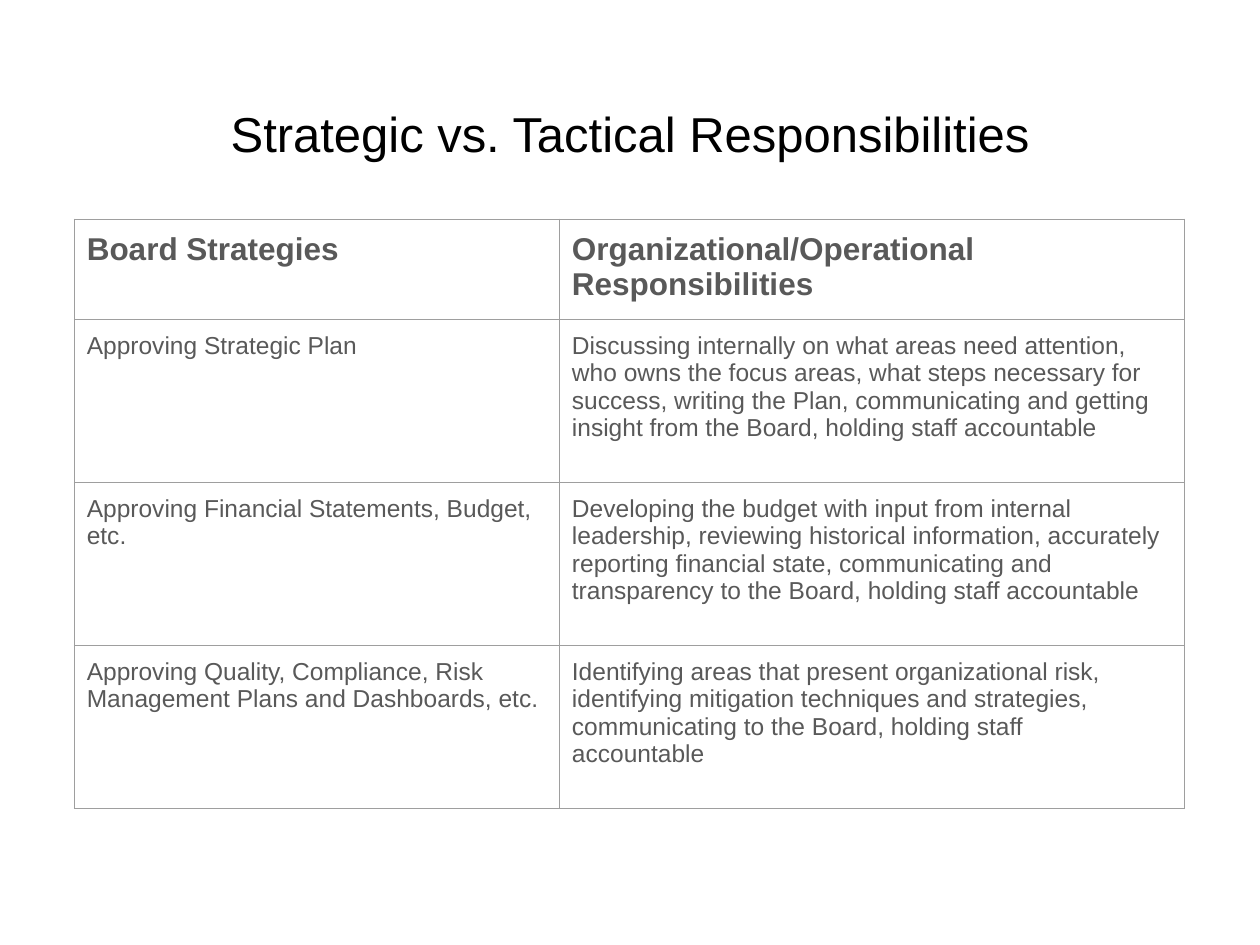
from dataclasses import dataclass

from lxml import etree
from pptx import Presentation
from pptx.dml.color import RGBColor
from pptx.enum.text import MSO_ANCHOR, PP_ALIGN
from pptx.oxml.ns import qn
from pptx.util import Cm, Pt

CENTER, LEFT = PP_ALIGN.CENTER, PP_ALIGN.LEFT
MIDDLE, TOP = MSO_ANCHOR.MIDDLE, MSO_ANCHOR.TOP


@dataclass(frozen=True)
class Theme:
    font: str = "Arial"
    title_color: str = "000000"
    body_color: str = "595959"
    border_color: str = "9E9E9E"
    title_size: int = 28
    header_size: int = 18
    body_size: int = 14
    border_width: float = 0.75


THEME = Theme()

# Each row pairs a board strategy with its operational counterpart
RESPONSIBILITIES = [
    ("Board Strategies", "Organizational/Operational Responsibilities"),
    ("Approving Strategic Plan",
     "Discussing internally on what areas need attention, who owns the focus "
     "areas, what steps necessary for success, writing the Plan, communicating "
     "and getting insight from the Board, holding staff accountable"),
    ("Approving Financial Statements, Budget, etc.",
     "Developing the budget with input from internal leadership, reviewing "
     "historical information, accurately reporting financial state, "
     "communicating and transparency to the Board, holding staff accountable"),
    ("Approving Quality, Compliance, Risk Management Plans and Dashboards, etc.",
     "Identifying areas that present organizational risk, identifying "
     "mitigation techniques and strategies, communicating to the Board, "
     "holding staff\naccountable"),
]
COLUMN_SHARES = (0.437, 0.563)
HEADER_HEIGHT = Cm(1.93)


def write_text(frame, text, *, size, color, bold=False, align=LEFT):
    """Fill a text frame, one paragraph for each line of text."""
    frame.word_wrap = True
    for index, line in enumerate(text.split("\n")):
        paragraph = frame.add_paragraph() if index else frame.paragraphs[0]
        paragraph.alignment = align
        run = paragraph.add_run()
        run.text = line
        run.font.name = THEME.font
        run.font.size = Pt(size)
        run.font.bold = bold
        run.font.color.rgb = RGBColor.from_string(color)


def set_borders(cell):
    """Draw all four edges; they must come before the fill in the XML."""
    properties = cell._tc.get_or_add_tcPr()
    for position, edge in enumerate(("a:lnL", "a:lnR", "a:lnT", "a:lnB")):
        line = etree.Element(qn(edge), w=str(Pt(THEME.border_width)))
        fill = etree.SubElement(line, qn("a:solidFill"))
        etree.SubElement(fill, qn("a:srgbClr"), val=THEME.border_color)
        properties.insert(position, line)


def add_title(slide, left, top, width, height):
    frame = slide.shapes.add_textbox(left, top, width, height).text_frame
    frame.vertical_anchor = MIDDLE
    write_text(frame, "Strategic vs. Tactical Responsibilities",
               size=THEME.title_size, color=THEME.title_color, align=CENTER)


def add_responsibilities(slide, left, top, width, height):
    table = slide.shapes.add_table(len(RESPONSIBILITIES), len(COLUMN_SHARES),
                                   left, top, width, height).table
    table.horz_banding = False
    for column, share in zip(table.columns, COLUMN_SHARES):
        column.width = int(width * share)

    body_height = (height - HEADER_HEIGHT) // (len(RESPONSIBILITIES) - 1)
    for row_index, texts in enumerate(RESPONSIBILITIES):
        is_header = row_index == 0
        table.rows[row_index].height = HEADER_HEIGHT if is_header else body_height
        for column_index, text in enumerate(texts):
            cell = table.cell(row_index, column_index)
            cell.margin_left = cell.margin_right = Cm(0.25)
            cell.margin_top = cell.margin_bottom = Cm(0.25)
            cell.vertical_anchor = TOP
            cell.fill.background()
            set_borders(cell)
            write_text(cell.text_frame, text, bold=is_header,
                       size=THEME.header_size if is_header else THEME.body_size,
                       color=THEME.body_color)


def main():
    deck = Presentation()
    deck.slide_width, deck.slide_height = Cm(25.4), Cm(19.05)
    slide = deck.slides.add_slide(deck.slide_layouts[6])
    add_title(slide, Cm(1.27), Cm(0.94), Cm(22.86), Cm(3.48))
    add_responsibilities(slide, Cm(1.5), Cm(4.42), Cm(22.38), Cm(11.78))
    deck.save("out.pptx")


if __name__ == "__main__":
    main()
